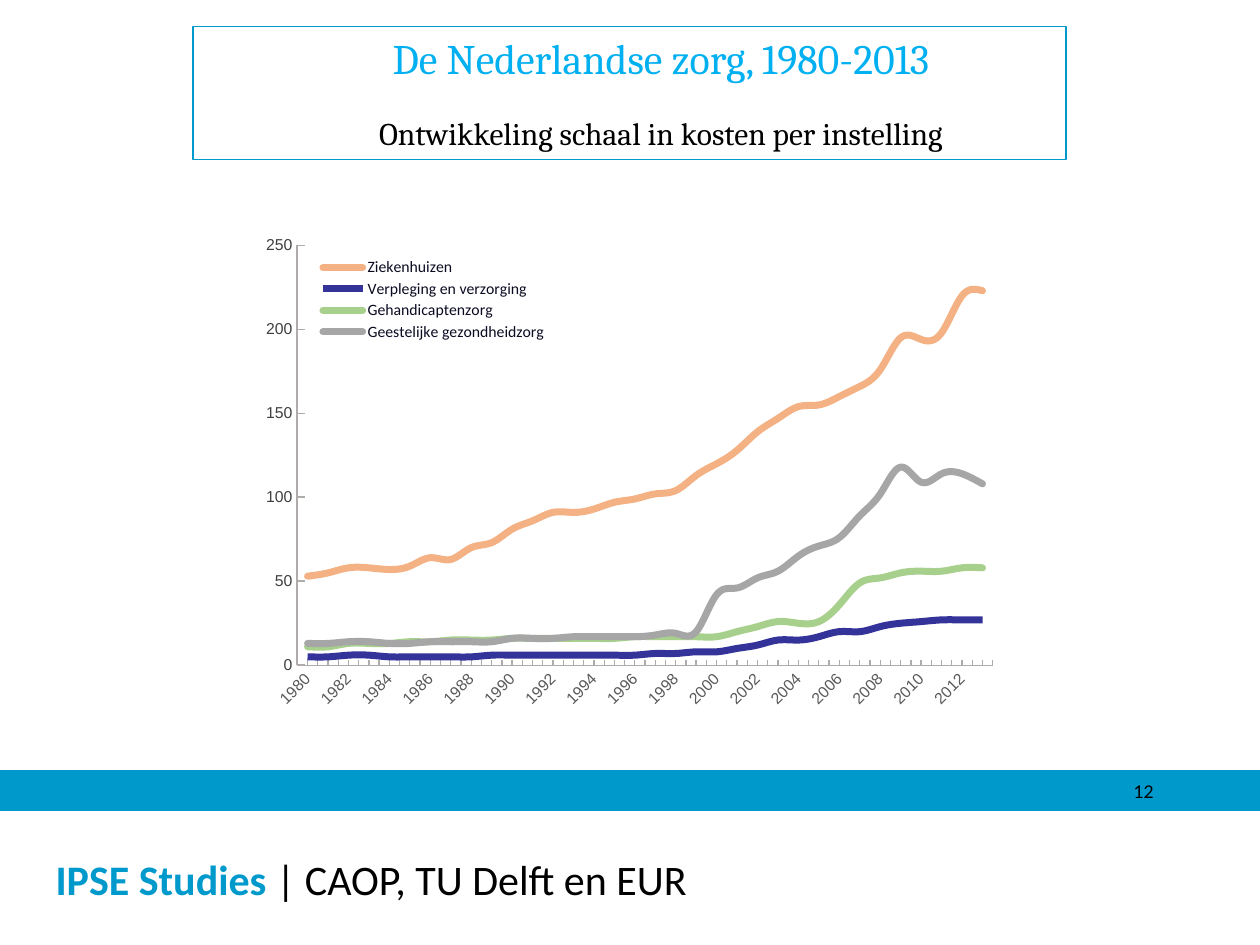
"""Build a slide on the growth in scale of Dutch care institutions, 1980-2013."""
from lxml.etree import SubElement
from pptx import Presentation
from pptx.chart.data import CategoryChartData
from pptx.dml.color import RGBColor
from pptx.enum.chart import XL_CHART_TYPE as ChartType, XL_LEGEND_POSITION as LegendPosition
from pptx.enum.chart import XL_TICK_MARK as TickMark
from pptx.enum.shapes import MSO_SHAPE as Preset
from pptx.enum.text import MSO_ANCHOR as Anchor, MSO_AUTO_SIZE as AutoSize, PP_ALIGN as Align
from pptx.oxml import parse_xml
from pptx.oxml.ns import nsdecls, qn
from pptx.util import Cm, Pt

BLUE = RGBColor(0x00, 0x99, 0xCC)
SKY = RGBColor(0x00, 0xB0, 0xF0)
BLACK = RGBColor(0x00, 0x00, 0x00)
WHITE = RGBColor(0xFF, 0xFF, 0xFF)
AXIS = RGBColor(0xAF, 0xAB, 0xAB)
YEAR_GREY = RGBColor(0x59, 0x59, 0x59)
VALUE_GREY = RGBColor(0x40, 0x40, 0x40)
LEGEND_INK = RGBColor(0x0B, 0x0B, 0x22)
ORANGE = RGBColor(0xF4, 0xB1, 0x83)
NAVY = RGBColor(0x33, 0x33, 0x99)
GREEN = RGBColor(0xA8, 0xD0, 0x8D)
GREY = RGBColor(0xA6, 0xA6, 0xA6)

HEADINGS = [
    ("De Nederlandse zorg, 1980-2013", 24, SKY),
    ("Ontwikkeling schaal in kosten per instelling", 18, BLACK),
]
FOOTER = [("IPSE Studies ", BLUE, True), ("| CAOP, TU Delft en EUR", BLACK, False)]
PAGE_NUMBER = "12"
BANDS = [(16.15, 0.8, BLUE), (16.36, 2.69, WHITE), (15.54, 0.61, BLUE)]
YEARS = [str(year) for year in range(1980, 2014)]
SERIES = [
    ("Ziekenhuizen", ORANGE, "rnd",
     [53, 55, 58, 58, 57, 59, 64, 63, 70, 73, 81, 86, 91, 91, 93, 97, 99, 102, 104, 113, 120,
      128, 139, 147, 154, 155, 160, 166, 176, 195, 194, 198, 220, 223]),
    ("Verpleging en verzorging", NAVY, "flat",
     [5, 5, 6, 6, 5, 5, 5, 5, 5, 6, 6, 6, 6, 6, 6, 6, 6, 7, 7, 8, 8,
      10, 12, 15, 15, 17, 20, 20, 23, 25, 26, 27, 27, 27]),
    ("Gehandicaptenzorg", GREEN, "rnd",
     [11, 11, 13, 13, 13, 14, 14, 15, 15, 15, 16, 16, 16, 16, 16, 16, 17, 17, 17, 17, 17,
      20, 23, 26, 25, 26, 36, 49, 52, 55, 56, 56, 58, 58]),
    ("Geestelijke gezondheidzorg", GREY, "rnd",
     [13, 13, 14, 14, 13, 13, 14, 14, 14, 14, 16, 16, 16, 17, 17, 17, 17, 18, 19, 20, 42,
      46, 52, 56, 65, 71, 76, 89, 102, 118, 109, 114, 114, 108]),
]


def style_font(font, name, size, color, bold=False):
    font.name, font.size, font.bold = name, Pt(size), bold
    font.color.rgb = color


def add_band(slide, top, height, color):
    band = slide.shapes.add_shape(Preset.RECTANGLE, 0, Cm(top), Cm(25.4), Cm(height))
    band.shadow.inherit = False
    band.fill.solid()
    band.fill.fore_color.rgb = color
    band.line.color.rgb = color
    band.line.width = Pt(0.75)
    return band


def add_footer(slide):
    bands = [add_band(slide, *band) for band in BANDS]
    frame = bands[1].text_frame
    frame.margin_left = Cm(1.12)
    frame.vertical_anchor = Anchor.MIDDLE
    paragraph = frame.paragraphs[0]
    paragraph.alignment = Align.LEFT
    for text, color, bold in FOOTER:
        run = paragraph.add_run()
        run.text = text
        style_font(run.font, "Calibri", 24, color, bold)

    number = slide.shapes.add_textbox(Cm(17.98), Cm(15.62), Cm(5.28), Cm(0.64)).text_frame
    number.word_wrap = True
    number.margin_left = number.margin_right = 0
    number.text = PAGE_NUMBER
    number.paragraphs[0].alignment = Align.RIGHT
    style_font(number.paragraphs[0].runs[0].font, "Lato", 10, BLACK)


def fill_title(title):
    title.left, title.top, title.width, title.height = Cm(3.89), Cm(0.53), Cm(17.6), Cm(2.69)
    title.line.color.rgb = BLUE
    title.line.width = Pt(0.75)
    frame = title.text_frame
    frame.auto_size = AutoSize.SHAPE_TO_FIT_TEXT
    frame.vertical_anchor = Anchor.TOP
    frame.text = "\n".join(text for text, _, _ in HEADINGS)
    for paragraph, (_, size, color) in zip(frame.paragraphs, HEADINGS):
        paragraph.alignment = Align.CENTER
        paragraph.space_after = Pt(18)
        properties = paragraph._p.get_or_add_pPr()
        properties.set("marL", str(Cm(1.27)))
        properties.set("indent", "0")
        style_font(paragraph.runs[0].font, "Cambria", size, color)


def place(element, index, inner=False, **fractions):
    for old in element.findall(qn("c:layout")):
        element.remove(old)
    layout = parse_xml(f"<c:layout {nsdecls('c')}><c:manualLayout/></c:layout>")
    settings = {"layoutTarget": "inner"} if inner else {}
    settings.update(xMode="edge", yMode="edge", **fractions)
    for name, value in settings.items():
        SubElement(layout[0], qn(f"c:{name}")).set("val", str(value))
    element.insert(index, layout)


def format_axes(chart):
    years, values = chart.category_axis, chart.value_axis
    for axis, color, width in ((years, YEAR_GREY, 0.75), (values, VALUE_GREY, 1)):
        axis.has_major_gridlines = False
        axis.format.line.color.rgb = AXIS
        axis.format.line.width = Pt(width)
        style_font(axis.tick_labels.font, "Arial", 9, color)
    years.major_tick_mark, years.minor_tick_mark = TickMark.NONE, TickMark.INSIDE
    values.major_tick_mark, values.minor_tick_mark = TickMark.INSIDE, TickMark.NONE
    values.minimum_scale, values.maximum_scale, values.major_unit = 0, 250, 50
    element = years._element
    element.find(f"{qn('c:txPr')}/{qn('a:bodyPr')}").set("rot", "-2700000")
    skip = parse_xml(f'<c:tickLblSkip {nsdecls("c")} val="2"/>')
    element.find(qn("c:noMultiLvlLbl")).addprevious(skip)


def add_cost_chart(slide):
    data = CategoryChartData()
    data.categories = YEARS
    for name, _, _, values in SERIES:
        data.add_series(name, values)
    chart = slide.shapes.add_chart(
        ChartType.LINE, Cm(5.08), Cm(4.55), Cm(15.24), Cm(9.96), data).chart
    chart.has_title = False
    style_font(chart.font, "Lato", 10, BLACK)
    plot = chart.plots[0]
    plot.vary_by_categories = False
    for series, (_, color, cap, _) in zip(plot.series, SERIES):
        series.smooth = True
        line = series.format.line
        line.color.rgb = color
        line.width = Pt(4)
        series._element.find(f"{qn('c:spPr')}/{qn('a:ln')}").set("cap", cap)
    format_axes(chart)
    chart.has_legend = True
    legend = chart.legend
    legend.position = LegendPosition.RIGHT
    legend.include_in_layout = True
    style_font(legend.font, "Calibri", 9, LEGEND_INK)
    place(legend._element, 1, x=0.08, y=0.06, w=0.32, h=0.18)
    plot_area = chart._chartSpace.chart.plotArea
    place(plot_area, 0, inner=True, x=0.06, y=0.04, w=0.92, h=0.85)


def main():
    presentation = Presentation()
    presentation.slide_width, presentation.slide_height = Cm(25.4), Cm(19.05)
    slide = presentation.slides.add_slide(presentation.slide_layouts[5])
    add_footer(slide)
    fill_title(slide.shapes.title)
    add_cost_chart(slide)
    presentation.save("out.pptx")


if __name__ == "__main__":
    main()
